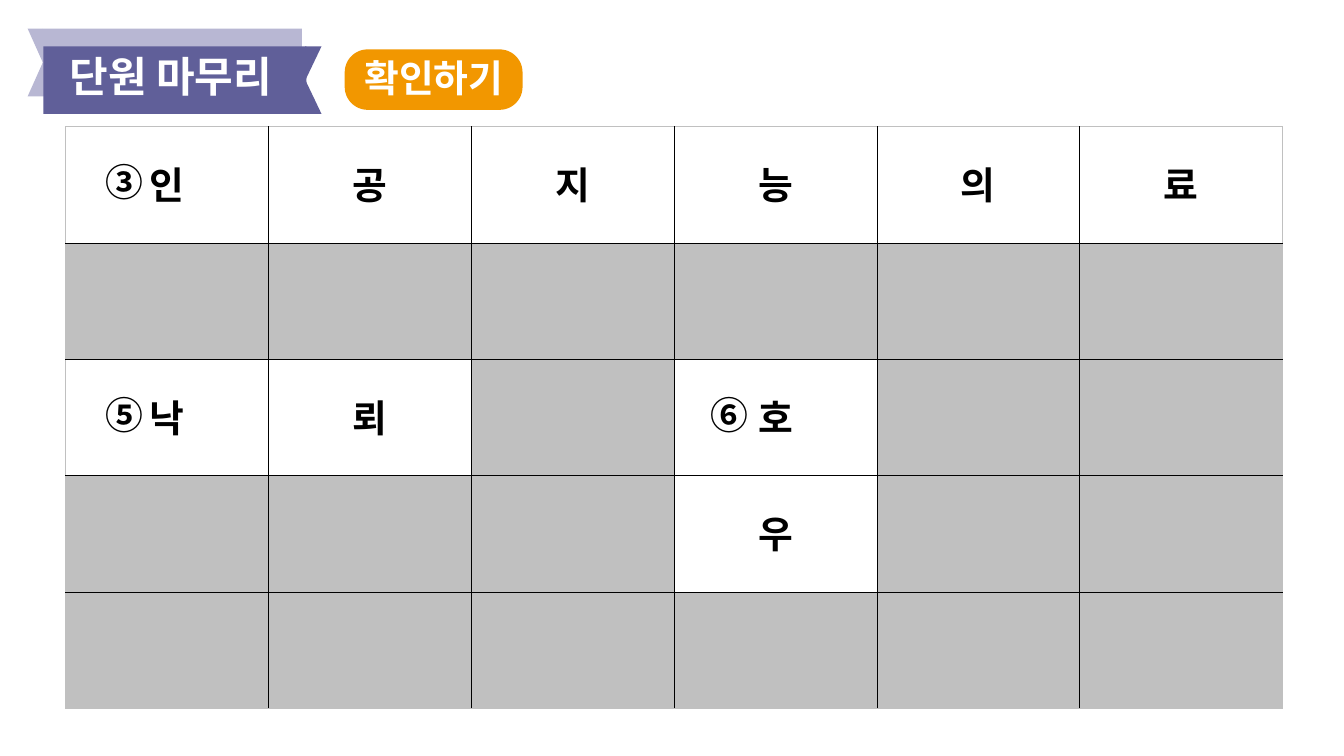
from dataclasses import dataclass

from lxml import etree
from pptx import Presentation
from pptx.dml.color import RGBColor
from pptx.enum.shapes import MSO_SHAPE
from pptx.enum.text import MSO_ANCHOR, MSO_AUTO_SIZE, PP_ALIGN
from pptx.oxml.ns import qn
from pptx.util import Emu, Pt

PLATE, CHEVRON, ROUND = MSO_SHAPE.PENTAGON, MSO_SHAPE.CHEVRON, MSO_SHAPE.ROUNDED_RECTANGLE
LEFT, CENTER = PP_ALIGN.LEFT, PP_ALIGN.CENTER
TOP, MIDDLE = MSO_ANCHOR.TOP, MSO_ANCHOR.MIDDLE
GROW = MSO_AUTO_SIZE.SHAPE_TO_FIT_TEXT

SCALE = 9144  # EMU per px, 100 px to the inch
PAGE_W, PAGE_H = 2667, 1500

GRID_X, GRID_Y, CELL_W, CELL_H = 130, 251, 402.5, 231
# A dot is a closed square.
CROSSWORD = ["인공지능의료", "......", "낙뢰.호..", "...우..", "......"]
CLUES = [("③", 199, 321), ("⑤", 199, 783), ("⑥", 1401, 783)]


@dataclass
class Theme:
    font: str = "Noto Sans CJK KR"
    title_size: int = 60
    text_size: int = 54
    spacing: float = 0.9
    ink: str = "000000"
    paper: str = "FFFFFF"
    closed: str = "C0C0C0"
    ribbon: str = "605F99"
    ribbon_back: str = "B8B7D3"
    badge: str = "F29700"


def px(*values):
    return [Emu(round(v * SCALE)) for v in values]


class Builder:
    def __init__(self, prs, theme):
        self.theme = theme
        self.s = prs.slides.add_slide(prs.slide_layouts[6])
        self.shapes = self.s.shapes

    def group(self):
        """Collect the elements that follow in a new group."""
        self.shapes = self.s.shapes.add_group_shape().shapes

    def ungroup(self):
        self.shapes = self.s.shapes

    def shape(self, kind, box, color, adj=None, rotation=0):
        sp = self.shapes.add_shape(kind, *px(*box))
        sp.shadow.inherit = False
        sp.fill.solid()
        sp.fill.fore_color.rgb = RGBColor.from_string(color)
        sp.line.fill.background()
        sp.rotation = rotation
        if adj is not None:
            sp.adjustments[0] = adj

    def set_text(self, tf, text, size, color, align):
        p = tf.paragraphs[0]
        p.alignment, p.line_spacing = align, self.theme.spacing
        r = p.add_run()
        r.text = text
        for name, value in {"name": self.theme.font, "size": Pt(size), "bold": True}.items():
            setattr(r.font, name, value)
        r.font.color.rgb = RGBColor.from_string(color)
        ea = etree.SubElement(r.font._element, qn("a:ea"))
        ea.set("typeface", self.theme.font)

    def text(self, text, box, size, color, align=LEFT, **frame):
        tf = self.shapes.add_textbox(*px(*box)).text_frame
        for name, value in {"word_wrap": True, "auto_size": GROW,
                            "vertical_anchor": TOP, **frame}.items():
            setattr(tf, name, value)
        self.set_text(tf, text, size, color, align)

    def border(self, cell, side, color):
        ln = etree.SubElement(cell._tc.get_or_add_tcPr(), qn(f"a:ln{side}"), w=str(Pt(1)))
        fill = etree.SubElement(ln, qn("a:solidFill"))
        etree.SubElement(fill, qn("a:srgbClr"), val=color)

    def table(self, rows, x, y, cell_w, cell_h):
        t = self.theme
        n_rows, n_cols = len(rows), len(rows[0])
        frame = self.shapes.add_table(
            n_rows, n_cols, *px(x, y, cell_w * n_cols, cell_h * n_rows))
        table = frame.table
        table.first_row = table.horz_banding = False
        for i, row in enumerate(rows):
            for j, letter in enumerate(row):
                cell = table.cell(i, j)
                cell.vertical_anchor = MIDDLE
                outer = {"L": j == 0, "R": j == n_cols - 1,
                         "T": i == 0, "B": i == n_rows - 1}
                for side, is_outer in outer.items():
                    self.border(cell, side, t.closed if is_outer else t.ink)
                cell.fill.solid()
                is_open = letter != "."
                cell.fill.fore_color.rgb = RGBColor.from_string(t.paper if is_open else t.closed)
                if is_open:
                    self.set_text(cell.text_frame, letter, t.text_size, t.ink, CENTER)


def main():
    prs = Presentation()
    prs.slide_width, prs.slide_height = px(PAGE_W, PAGE_H)
    t = Theme()
    b = Builder(prs, t)

    b.group()
    b.shape(PLATE, (85, 57, 514, 134), t.ribbon_back, adj=0, rotation=180)
    b.shape(CHEVRON, (55, 57, 60, 134), t.ribbon_back)
    b.shape(PLATE, (86, 92, 522, 134), t.ribbon, adj=0)
    b.shape(CHEVRON, (574, 92, 64, 134), t.ribbon, rotation=180)
    b.text("단원 마무리", (128, 107, 441, 101), t.title_size, t.paper)

    b.group()
    b.shape(ROUND, (684, 98, 353, 120), t.badge, adj=0.38)
    inset = px(6)[0]
    b.text("확인하기", (713, 112, 296, 93), t.text_size, t.paper, CENTER,
           word_wrap=False, vertical_anchor=MIDDLE, margin_left=inset,
           margin_right=inset, margin_top=inset, margin_bottom=inset)
    b.ungroup()

    b.table(CROSSWORD, GRID_X, GRID_Y, CELL_W, CELL_H)
    for number, x, y in CLUES:
        b.text(number, (x, y, 113, 92), t.text_size, t.ink)

    prs.save("out.pptx")


if __name__ == "__main__":
    main()
